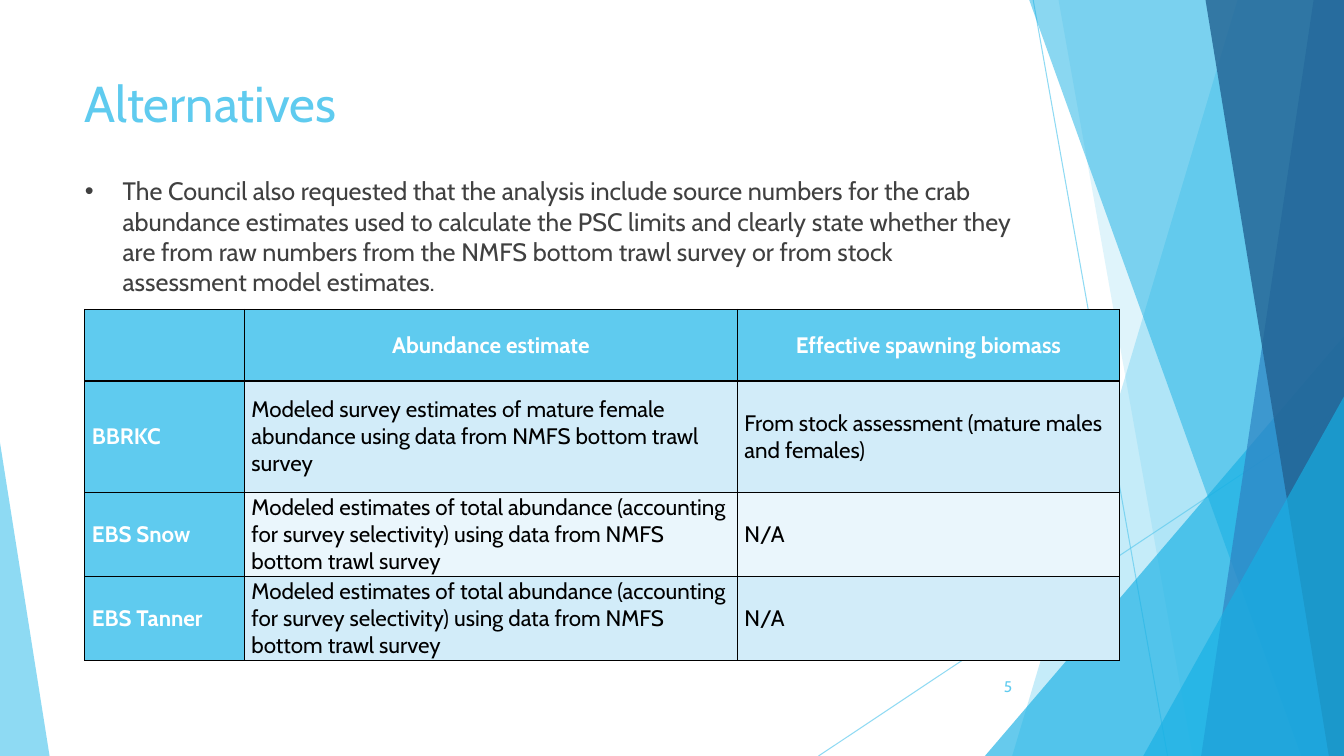
"""Build the Alternatives slide: crab abundance sources over a faceted blue backdrop."""
from dataclasses import dataclass
from typing import Any

from lxml import etree
from pptx import Presentation
from pptx import util as u
from pptx.dml.color import RGBColor
from pptx.enum import shapes, text
from pptx.oxml import ns

WIDTH, HEIGHT = 12192000, 6858000
COLUMNS, ROWS = 160, 90
COLORS = {
    "sky": "5FCBEF", "cyan": "17B0E4", "blue": "2E83C3", "navy": "226292",
    "gray": "404040", "black": "000000", "white": "FFFFFF",
    "band": "D2ECF9", "pale": "EAF6FC",
}
FACE = "Cabin"


@dataclass(frozen=True)
class Area:
    left: float
    top: float
    width: float
    height: float


@dataclass(frozen=True)
class Ray:
    start: tuple[float, float]
    end: tuple[float, float]


@dataclass(frozen=True)
class Facet:
    top_left: float
    bottom_left: float
    color: str
    opacity: int


@dataclass(frozen=True)
class Wedge:
    area: Area
    apex: float
    color: str
    opacity: int


BACKDROP = [
    Ray((123, 0), (139, 90)),
    Ray((160, 48.35), (97.45, 90)),
    Facet(147.35, 120.5, "sky", 36),
    Facet(126, 142, "sky", 20),
    Wedge(Area(117.25, 40, 42.75, 50), 1, "cyan", 66),
    Facet(122.5, 154.9, "cyan", 50),
    Facet(156.4, 143, "blue", 70),
    Facet(143.5, 158.2, "navy", 80),
    Wedge(Area(136.1, 47.2, 23.9, 42.8), 1, "cyan", 66),
    Wedge(Area(0, 52.7, 5.9, 37.3), 0, "sky", 70),
]
TITLE_AREA = Area(8.9, 8, 112.8, 17.3)
BODY_AREA = Area(8.9, 20.3, 112.8, 17.3)
NUMBER_AREA = Area(112.7, 79.3, 9, 4.8)
TABLE_AREA = Area(10.1, 36.85, 123.2, 41.8)
TABLE_COLUMNS = [19, 58.7, 45.5]
TABLE_ROWS = [8.5, 13.3, 10, 10]

BODY_TEXT = (
    "The Council also requested that the analysis include source numbers for the crab "
    "abundance estimates used to calculate the PSC limits and clearly state whether they "
    "are from raw numbers from the NMFS bottom trawl survey or from stock assessment "
    "model estimates."
)
TOTAL_ABUNDANCE = (
    "Modeled estimates of total abundance (accounting for survey selectivity) "
    "using data from NMFS bottom trawl survey"
)
TABLE_TEXT = [
    ["", "Abundance estimate", "Effective spawning biomass"],
    ["BBRKC",
     "Modeled survey estimates of mature female abundance using data from "
     "NMFS bottom trawl survey",
     "From stock assessment (mature males and females)"],
    ["EBS Snow", TOTAL_ABUNDANCE, "N/A"],
    ["EBS Tanner", TOTAL_ABUNDANCE, "N/A"],
]


def across(columns: float) -> int:
    return round(columns * WIDTH / COLUMNS)


def down(rows: float) -> int:
    return round(rows * HEIGHT / ROWS)


def bounds(area: Area) -> tuple[int, int, int, int]:
    return across(area.left), down(area.top), across(area.width), down(area.height)


def color_of(name: str) -> RGBColor:
    return RGBColor.from_string(COLORS[name])


def assign(target: Any, formats: dict[str, Any]) -> None:
    for name, value in formats.items():
        setattr(target, name, value)


def add_node(parent: Any, tag: str, **attributes: str) -> Any:
    return etree.SubElement(parent, ns.qn(tag), attributes)


def set_opacity(shape: Any, percent: int) -> None:
    for color in shape.element.spPr.iter(ns.qn("a:srgbClr")):
        add_node(color, "a:alpha", val=str(percent * 1000))


def paint(shape: Any, color: str, opacity: int) -> None:
    shape.shadow.inherit = False
    shape.fill.solid()
    shape.fill.fore_color.rgb = color_of(color)
    shape.line.fill.background()
    set_opacity(shape, opacity)


def draw_ray(page: Any, ray: Ray) -> None:
    (x1, y1), (x2, y2) = ray.start, ray.end
    line = page.shapes.add_connector(
        shapes.MSO_CONNECTOR.STRAIGHT, across(x1), down(y1), across(x2), down(y2))
    line.line.color.rgb = color_of("sky")
    line.line.width = u.Pt(0.75)
    set_opacity(line, 70)
    add_node(line.element.spPr, "a:effectLst")


def draw_facet(page: Any, facet: Facet) -> None:
    top = down(-0.1)
    builder = page.shapes.build_freeform(across(facet.top_left), top)
    builder.add_line_segments(
        [(WIDTH, top), (WIDTH, HEIGHT), (across(facet.bottom_left), HEIGHT)], close=True)
    paint(builder.convert_to_shape(), facet.color, facet.opacity)


def draw_wedge(page: Any, wedge: Wedge) -> None:
    shape = page.shapes.add_shape(
        shapes.MSO_SHAPE.ISOSCELES_TRIANGLE, *bounds(wedge.area))
    shape.adjustments[0] = wedge.apex
    paint(shape, wedge.color, wedge.opacity)


def write(frame: Any, words: str, size: float, color: str, bold: bool = False,
          **layout: Any) -> None:
    frame.text = words
    para = frame.paragraphs[0]
    assign(para, layout)
    assign(para.font, {"name": FACE, "size": u.Pt(size), "bold": bold})
    para.font.color.rgb = color_of(color)


def fill_box(page: Any, box: Any, area: Area, anchor: Any) -> Any:
    assign(box, dict(zip(("left", "top", "width", "height"), bounds(area))))
    assign(box.text_frame, {"word_wrap": True, "vertical_anchor": anchor,
                            "auto_size": text.MSO_AUTO_SIZE.NONE})
    page.shapes.element.append(box.element)
    return box.text_frame


def add_bullet(para: Any) -> None:
    properties = para._p.get_or_add_pPr()
    indent = u.Inches(0.38)
    properties.set("marL", str(indent))
    properties.set("indent", str(-indent))
    add_node(add_node(properties, "a:buClr"), "a:srgbClr", val=COLORS["sky"])
    add_node(properties, "a:buSzPct", val="80000")
    add_node(properties, "a:buChar", char="▶")


def add_borders(cell: Any) -> None:
    properties = cell._tc.get_or_add_tcPr()
    for side in ("a:lnL", "a:lnR", "a:lnT", "a:lnB"):
        border = add_node(properties, side, w=str(u.Pt(1)))
        add_node(add_node(border, "a:solidFill"), "a:srgbClr", val=COLORS["black"])


def draw_table(page: Any) -> None:
    table = page.shapes.add_table(
        len(TABLE_ROWS), len(TABLE_COLUMNS), *bounds(TABLE_AREA)).table
    for column, width in zip(table.columns, TABLE_COLUMNS):
        column.width = across(width)
    for row, height in zip(table.rows, TABLE_ROWS):
        row.height = down(height)
    inset = u.Inches(0.07)
    for r, line in enumerate(TABLE_TEXT):
        for c, words in enumerate(line):
            cell = table.cell(r, c)
            heading = r == 0 or c == 0
            assign(cell, {"margin_left": inset, "margin_right": inset, "margin_top": 0,
                          "margin_bottom": 0, "vertical_anchor": text.MSO_ANCHOR.MIDDLE})
            add_borders(cell)
            cell.fill.solid()
            cell.fill.fore_color.rgb = color_of(
                "sky" if heading else "band" if r % 2 else "pale")
            write(cell.text_frame, words, 16, "white" if heading else "black", heading,
                  space_after=u.Pt(8),
                  alignment=text.PP_ALIGN.LEFT if r else text.PP_ALIGN.CENTER)


def main() -> None:
    deck = Presentation()
    assign(deck, {"slide_width": WIDTH, "slide_height": HEIGHT})
    page = deck.slides.add_slide(deck.slide_layouts[1])
    painters = {Ray: draw_ray, Facet: draw_facet, Wedge: draw_wedge}
    for item in BACKDROP:
        painters[type(item)](page, item)
    left, top = text.PP_ALIGN.LEFT, text.MSO_ANCHOR.TOP
    title = fill_box(page, page.shapes.title, TITLE_AREA, top)
    write(title, "Alternatives", 36, "sky", alignment=left)
    body = fill_box(page, page.placeholders[1], BODY_AREA, top)
    add_bullet(body.paragraphs[0])
    write(body, BODY_TEXT, 18, "gray", alignment=left, space_before=u.Pt(0))
    number = page.shapes.add_textbox(*bounds(NUMBER_AREA))
    write(fill_box(page, number, NUMBER_AREA, text.MSO_ANCHOR.MIDDLE), "5", 11, "sky",
          alignment=text.PP_ALIGN.RIGHT)
    draw_table(page)
    deck.save("out.pptx")


if __name__ == "__main__":
    main()
